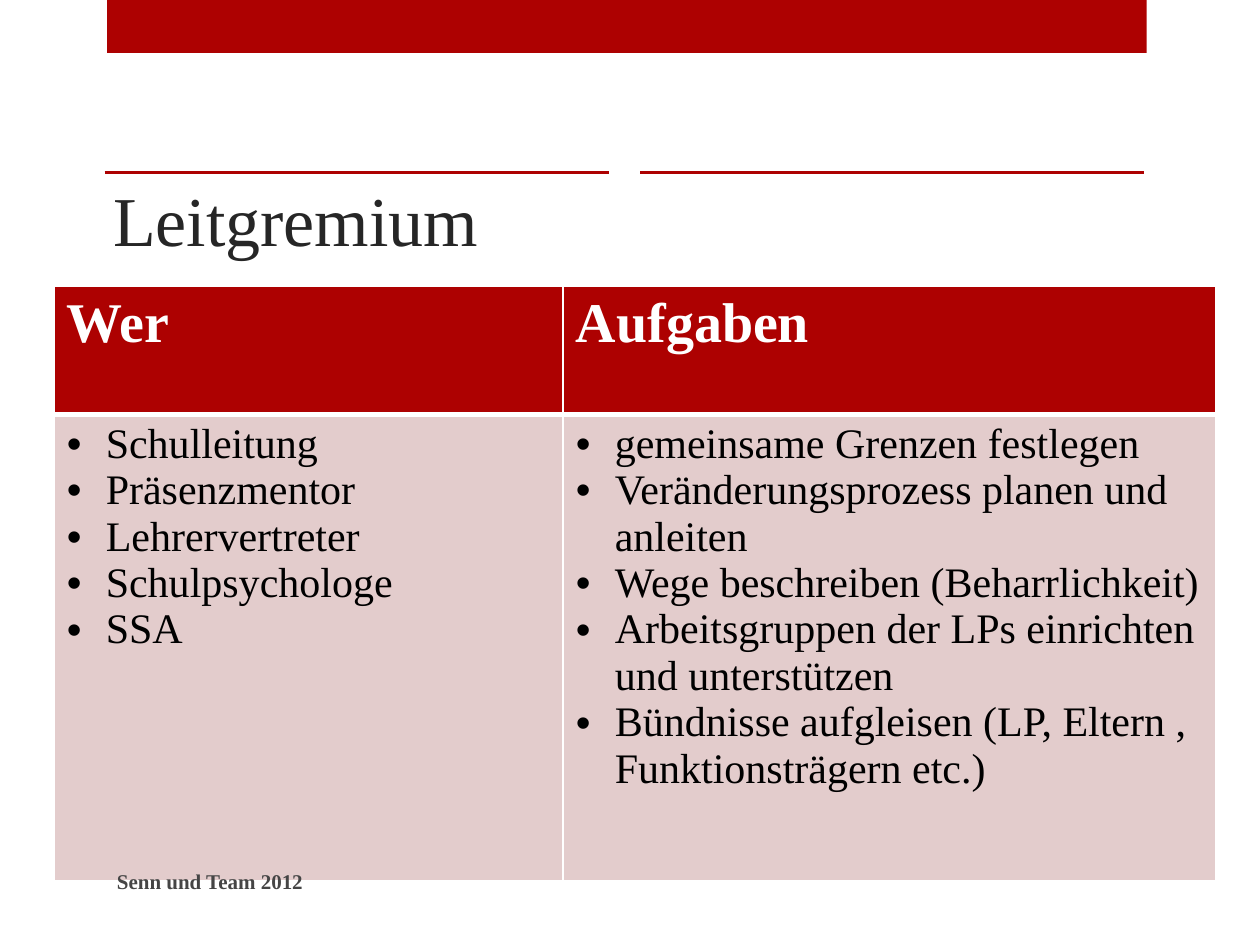
"""Build the "Leitgremium" slide: who belongs to the steering group and what it does."""
from dataclasses import dataclass

from lxml import etree
from pptx import Presentation
from pptx import util as u
from pptx.dml.color import RGBColor
from pptx.enum import shapes, text
from pptx.oxml import ns


@dataclass(frozen=True)
class TextStyle:
    size: int
    color: str
    bold: bool = False


@dataclass(frozen=True)
class Theme:
    font: str = "Times New Roman"
    accent: str = "AD0101"
    tint: str = "E3CCCC"
    border: str = "FFFFFF"
    rule_width: float = 1.25
    title: TextStyle = TextStyle(40, "262626")
    heading: TextStyle = TextStyle(32, "FFFFFF", True)
    item: TextStyle = TextStyle(24, "000000")
    footer: TextStyle = TextStyle(12, "454545", True)


@dataclass(frozen=True)
class Box:
    left: float
    top: float
    width: float
    height: float

    def lengths(self) -> tuple:
        return tuple(map(u.Inches, (self.left, self.top, self.width, self.height)))


@dataclass(frozen=True)
class Column:
    heading: str
    width: float
    items: tuple


@dataclass(frozen=True)
class Label:
    wording: str
    box: Box
    anchor: text.MSO_ANCHOR
    style: TextStyle


THEME = Theme()
BAND = Box(0.85, 0, 8.25, 0.42)
RULE_LEFT, RULE_TOP, RULE_LENGTH, RULE_GAP = 0.83, 1.37, 4, 0.25
TABLE_LEFT, TABLE_TOP = 0.43, 2.27
ROW_HEIGHTS = (1.02, 3.7)
INDENT = 0.31
THIN, THICK = 1, 3
COLUMNS = (
    Column("Wer", 4.04, (
        "Schulleitung", "Präsenzmentor", "Lehrervertreter", "Schulpsychologe", "SSA")),
    Column("Aufgaben", 5.18, (
        "gemeinsame Grenzen festlegen",
        "Veränderungsprozess planen und anleiten",
        "Wege beschreiben (Beharrlichkeit)",
        "Arbeitsgruppen der LPs einrichten und unterstützen",
        "Bündnisse aufgleisen (LP, Eltern , Funktionsträgern etc.)")),
)
LABELS = (
    Label("Leitgremium", Box(0.8, 0.92, 4.01, 1.2), text.MSO_ANCHOR.BOTTOM, THEME.title),
    Label("Senn und Team 2012", Box(0.83, 6.79, 5.33, 0.4), text.MSO_ANCHOR.MIDDLE, THEME.footer),
)


def write(paragraph, wording: str, style: TextStyle) -> None:
    """Add one formatted run to a paragraph."""
    run = paragraph.add_run()
    run.text = wording
    formats = {"name": THEME.font, "size": u.Pt(style.size), "bold": style.bold}
    for attribute, value in formats.items():
        setattr(run.font, attribute, value)
    run.font.color.rgb = RGBColor.from_string(style.color)


def add_bullet(paragraph) -> None:
    """Give a paragraph a hanging bullet."""
    properties = paragraph._p.get_or_add_pPr()
    properties.set("marL", str(u.Inches(INDENT)))
    properties.set("indent", str(u.Inches(-INDENT)))
    etree.SubElement(properties, ns.qn("a:buFont"), typeface="Arial")
    etree.SubElement(properties, ns.qn("a:buChar"), char="•")


def paint_cell(cell, color: str, top: float, bottom: float) -> None:
    """Draw the borders of a cell and fill it."""
    properties = cell._tc.get_or_add_tcPr()
    for side, width in {"L": THIN, "R": THIN, "T": top, "B": bottom}.items():
        edge = etree.SubElement(properties, ns.qn(f"a:ln{side}"), w=str(u.Pt(width)))
        fill = etree.SubElement(edge, ns.qn("a:solidFill"))
        etree.SubElement(fill, ns.qn("a:srgbClr"), val=THEME.border)
    cell.fill.solid()
    cell.fill.fore_color.rgb = RGBColor.from_string(color)


def draw_band(slide) -> None:
    """Draw the coloured band at the top edge."""
    band = slide.shapes.add_shape(shapes.MSO_SHAPE.RECTANGLE, *BAND.lengths())
    band.shadow.inherit = False
    band.fill.solid()
    band.fill.fore_color.rgb = RGBColor.from_string(THEME.accent)
    band.line.fill.background()


def draw_rule(slide, left: float) -> None:
    """Draw one thin rule above the title."""
    rule = slide.shapes.add_connector(
        shapes.MSO_CONNECTOR.STRAIGHT, u.Inches(left), u.Inches(RULE_TOP),
        u.Inches(left + RULE_LENGTH), u.Inches(RULE_TOP))
    rule.line.color.rgb = RGBColor.from_string(THEME.accent)
    rule.line.width = u.Pt(THEME.rule_width)
    etree.SubElement(rule._element.spPr, ns.qn("a:effectLst"))


def draw_table(slide) -> None:
    """Draw the table of members and tasks."""
    box = Box(TABLE_LEFT, TABLE_TOP, sum(c.width for c in COLUMNS), sum(ROW_HEIGHTS))
    table = slide.shapes.add_table(len(ROW_HEIGHTS), len(COLUMNS), *box.lengths()).table
    for row, height in zip(table.rows, ROW_HEIGHTS):
        row.height = u.Inches(height)
    for index, column in enumerate(COLUMNS):
        table.columns[index].width = u.Inches(column.width)
        heading, body = table.cell(0, index), table.cell(1, index)
        paint_cell(heading, THEME.accent, THIN, THICK)
        paint_cell(body, THEME.tint, THICK, THIN)
        write(heading.text_frame.paragraphs[0], column.heading, THEME.heading)
        for position, item in enumerate(column.items):
            frame = body.text_frame
            paragraph = frame.add_paragraph() if position else frame.paragraphs[0]
            add_bullet(paragraph)
            write(paragraph, item, THEME.item)


def draw_label(slide, label: Label) -> None:
    """Draw a single-line text box."""
    frame = slide.shapes.add_textbox(*label.box.lengths()).text_frame
    for attribute, value in {"word_wrap": True, "vertical_anchor": label.anchor}.items():
        setattr(frame, attribute, value)
    write(frame.paragraphs[0], label.wording, label.style)


def main() -> None:
    """Assemble and save the slide."""
    deck = Presentation()
    deck.slide_width, deck.slide_height = u.Inches(10), u.Inches(7.5)
    slide = deck.slides.add_slide(deck.slide_layouts[6])
    draw_band(slide)
    for index in range(2):
        draw_rule(slide, RULE_LEFT + index * (RULE_LENGTH + RULE_GAP))
    draw_table(slide)
    for label in LABELS:
        draw_label(slide, label)
    deck.save("out.pptx")


if __name__ == "__main__":
    main()
